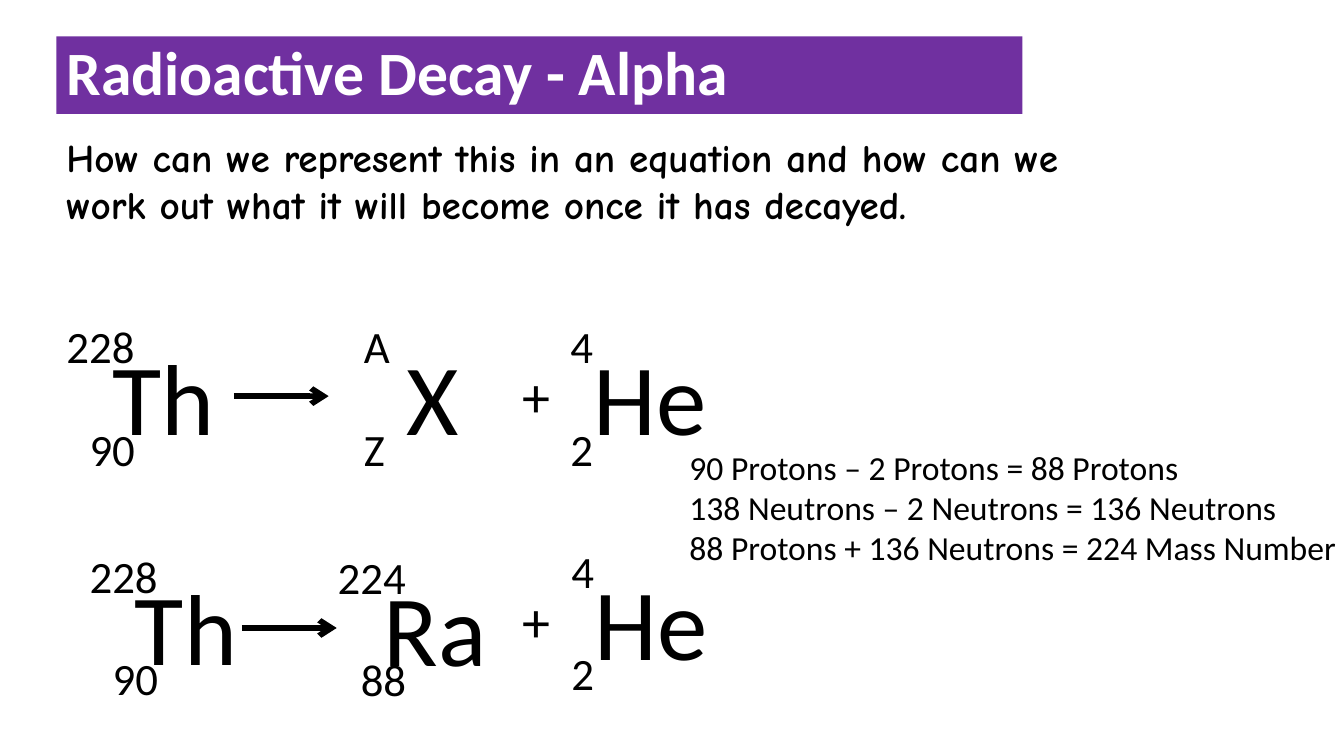
from pptx import Presentation
from pptx import util as u
from pptx.dml.color import RGBColor
from pptx.enum import shapes, text
from pptx.oxml import ns
from lxml import etree

PURPLE = RGBColor(0x70, 0x30, 0xA0)
WHITE = RGBColor(0xFF, 0xFF, 0xFF)
BLACK = RGBColor(0, 0, 0)
SCALE = 9144


def px(*vals):
    return [u.Emu(val * SCALE) for val in vals]


def write(shape, words, size, color=BLACK, font="Calibri", bold=False):
    frame = shape.text_frame
    frame.text = words
    for para in frame.paragraphs:
        para.alignment = text.PP_ALIGN.LEFT
        for run in para.runs:
            run.font.size = u.Pt(size)
            run.font.name = font
            run.font.bold = bold
            run.font.color.rgb = color
    return frame


def label(parent, words, box, size, wrap=False):
    shape = parent.add_textbox(*px(*box))
    frame = write(shape, words, size)
    frame.word_wrap = wrap
    frame.auto_size = text.MSO_AUTO_SIZE.SHAPE_TO_FIT_TEXT


def index(parent, words, edge, top):
    width = 20 + 23 * len(words)
    label(parent, words, (edge - width, top, width, 64), 32)


def nuclide(slide, symbol, mass, number, left, edge, top):
    group = slide.shapes.add_group_shape().shapes
    label(group, symbol, (left, top + 16, 150 if symbol == "He" else 131, 131), 72, True)
    index(group, mass, edge, top)
    index(group, number, edge, top + 102)


def arrow(slide, left, top):
    line = slide.shapes.add_connector(
        shapes.MSO_CONNECTOR.STRAIGHT, *px(left, top, left + 94, top))
    line.line.color.rgb = BLACK
    line.line.width = u.Pt(4)
    etree.SubElement(line.line._get_or_add_ln(), ns.qn("a:tailEnd"), type="arrow")
    etree.SubElement(line._element.spPr, ns.qn("a:effectLst"))


def heading(slide, words):
    title = slide.shapes.title
    title.left, title.top, title.width, title.height = px(56, 36, 958, 77)
    title.fill.solid()
    title.fill.fore_color.rgb = PURPLE
    frame = write(title, words, 44, WHITE, bold=True)
    frame.auto_size = text.MSO_AUTO_SIZE.NONE
    frame.vertical_anchor = text.MSO_ANCHOR.MIDDLE
    frame.paragraphs[0].line_spacing = 0.9


def question(slide, words):
    panel = slide.shapes.add_shape(
        shapes.MSO_SHAPE.RECTANGLE, *px(56, 127, 1034, 151))
    panel.shadow.inherit = False
    panel.fill.solid()
    panel.fill.fore_color.rgb = WHITE
    panel.line.color.rgb = WHITE
    panel.line.width = u.Pt(4.5)
    frame = write(panel, words, 28, font="Comic Neue", bold=True)
    frame.word_wrap = True
    frame.vertical_anchor = text.MSO_ANCHOR.TOP


def main():
    deck = Presentation()
    deck.slide_width, deck.slide_height = px(1333, 750)
    slide = deck.slides.add_slide(deck.slide_layouts[5])
    heading(slide, "Radioactive Decay - Alpha")
    question(slide, "How can we represent this in an equation and how can we "
                    "work out what it will become once it has decayed.")

    for nucleus in (
        ("Th", "228", "90", 102, 145, 311),
        ("X", "A", "Z", 393, 394, 311),
        ("He", "4", "2", 579, 599, 311),
        ("Th", "228", "90", 124, 168, 539),
        ("Ra", "224", "88", 371, 414, 540),
        ("He", "4", "2", 580, 600, 534),
    ):
        nuclide(slide, *nucleus)
    for left, top in ((232, 393), (240, 623)):
        arrow(slide, left, top)
    for top in (354, 577):
        label(slide.shapes, "+", (508, top, 48, 77), 40)

    sums = ("90 Protons – 2 Protons = 88 Protons",
            "138 Neutrons – 2 Neutrons = 136 Neutrons",
            "88 Protons + 136 Neutrons = 224 Mass Number")
    label(slide.shapes, "\n".join(sums), (674, 438, 667, 131), 24)
    deck.save("out.pptx")


if __name__ == "__main__":
    main()
